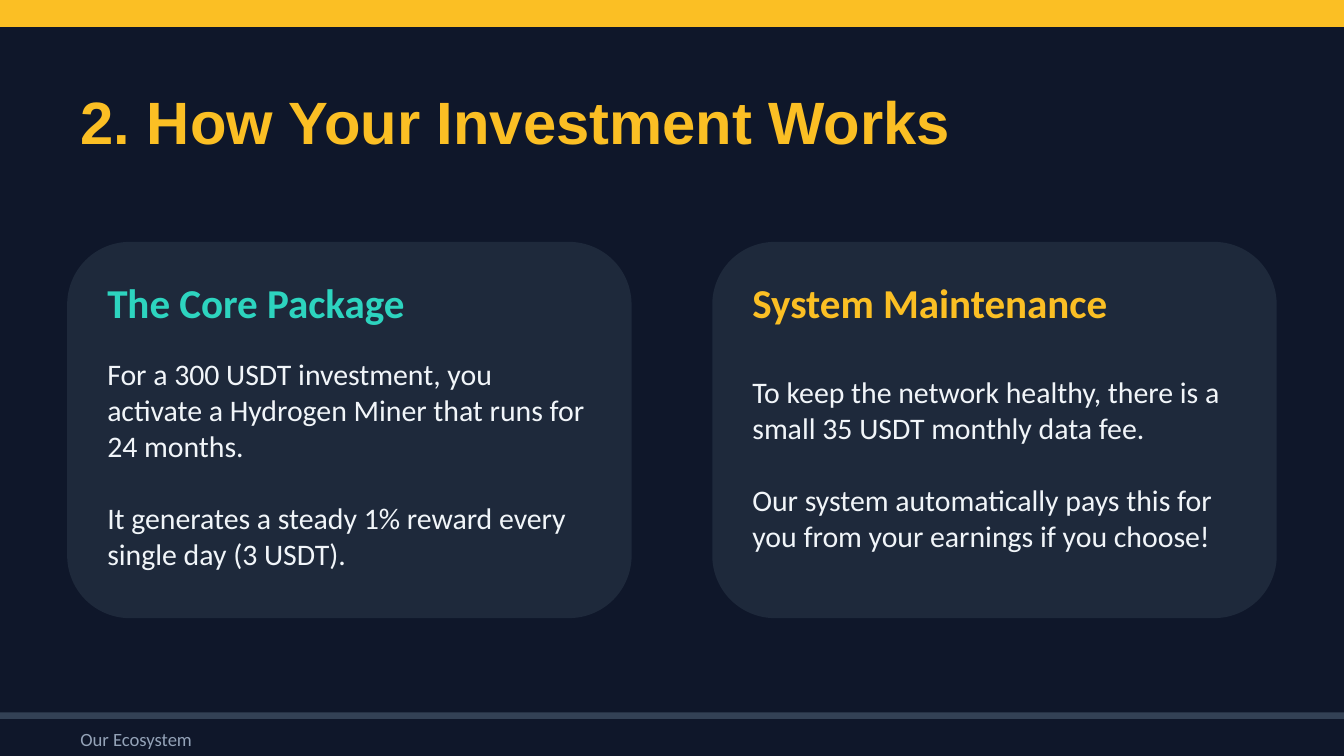
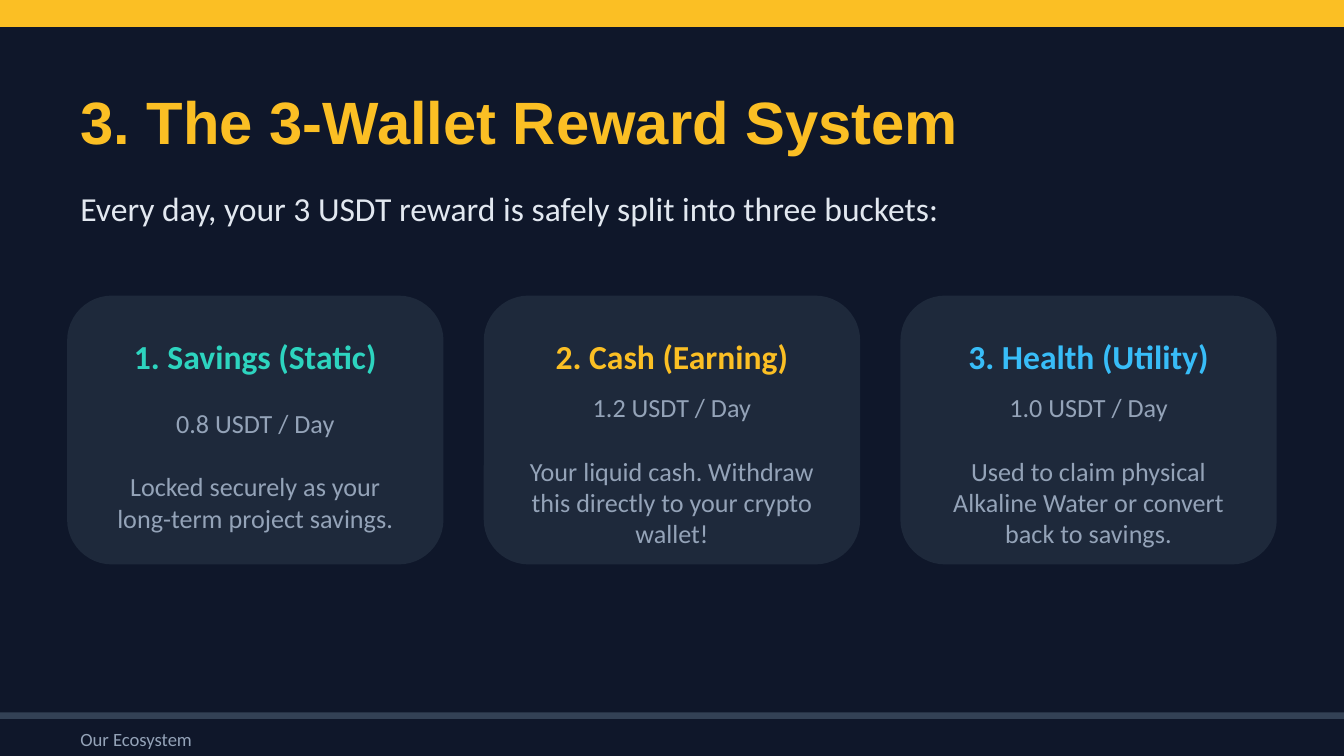
from pptx import Presentation
from pptx import util as u
from pptx.dml.color import RGBColor
from pptx.enum import shapes, text

HUES = {
    "night": "0F172A", "card": "1E293B", "rule": "334155", "gold": "FBBF24",
    "teal": "2DD4BF", "sky": "38BDF8", "pale": "F1F5F9", "soft": "E2E8F0",
    "mute": "94A3B8",
}
STYLES = {
    "title": dict(name="Arial", size=32, bold=True, hue="gold"),
    "lead": dict(name="Calibri", size=18, hue="soft"),
    "foot": dict(name="Calibri", size=10, hue="mute"),
    "wide head": dict(name="Calibri", size=22, bold=True),
    "wide body": dict(name="Calibri", size=16, hue="pale"),
    "slim head": dict(name="Calibri", size=18, bold=True),
    "slim body": dict(name="Calibri", size=14, hue="mute"),
}
LEFT, SPAN = 0.5, 9
LINE = 1.22  # line height of the body font, in ems


def tint(key):
    return RGBColor.from_string(HUES[key])


def place(box):
    return [u.Inches(n) for n in box]


def block(slide, kind, box, hue):
    item = slide.shapes.add_shape(kind, *place(box))
    item.shadow.inherit = False
    item.fill.solid()
    item.fill.fore_color.rgb = tint(hue)
    item.line.fill.background()
    return item


def write(frame, lines, style, hue=None, align=text.PP_ALIGN.LEFT):
    form = dict(STYLES[style])
    hue = hue or form.pop("hue")
    form["size"] = u.Pt(form["size"])
    traits = dict(word_wrap=True, auto_size=text.MSO_AUTO_SIZE.NONE,
                  vertical_anchor=text.MSO_ANCHOR.MIDDLE)
    for key, val in traits.items():
        setattr(frame, key, val)
    for i, line in enumerate(lines):
        para = frame.paragraphs[0] if i == 0 else frame.add_paragraph()
        para.alignment = align
        if i:
            para.space_before = int(form["size"] * LINE)
        run = para.add_run()
        run.text = line
        for key, val in form.items():
            setattr(run.font, key, val)
        run.font.color.rgb = tint(hue)


def label(slide, box, lines, style, **look):
    item = slide.shapes.add_textbox(*place(box))
    write(item.text_frame, lines, style, **look)
    return item


def dress(deck, slide):
    """Give the master its backdrop, bands and footer."""
    master = deck.slide_master
    master.background.fill.solid()
    master.background.fill.fore_color.rgb = tint("night")
    rect = shapes.MSO_SHAPE.RECTANGLE
    parts = [
        block(slide, rect, (0, 0, 10, 0.2), "gold"),
        block(slide, rect, (0, 5.3, 10, 0.05), "rule"),
        label(slide, (LEFT, 5.4, 2, 0.2), ["Our Ecosystem"], "foot"),
    ]
    for part in parts:
        master.shapes._spTree.append(part._element)


def head(slide, line):
    title = slide.shapes.title
    title.left, title.top, title.width, title.height = place((LEFT, 0.5, SPAN, 0.8))
    write(title.text_frame, [line], "title")


def card(slide, box, data, style, drop, tall, pad, align):
    """Draw a card; drop and tall place its body, pad insets its heading."""
    x, y, w, h = box
    name, hue, lines = data
    block(slide, shapes.MSO_SHAPE.ROUNDED_RECTANGLE, box, "card")
    label(slide, (x + pad, y + 0.2, w - 2 * pad, 0.5), [name],
          style + " head", hue=hue, align=align)
    label(slide, (x + 0.2, y + drop, w - 0.4, tall), lines,
          style + " body", align=align)


def row(slide, top, high, gap, cards, **look):
    """Spread equal cards over the content width."""
    wide = (SPAN - gap * (len(cards) - 1)) / len(cards)
    for i, data in enumerate(cards):
        card(slide, (LEFT + i * (wide + gap), top, wide, high), data, **look)


def works(slide):
    head(slide, "2. How Your Investment Works")
    row(slide, 1.8, 2.8, 0.6, [
        ("The Core Package", "teal", [
            "For a 300 USDT investment, you activate a Hydrogen Miner that runs for 24 months.",
            "It generates a steady 1% reward every single day (3 USDT)."]),
        ("System Maintenance", "gold", [
            "To keep the network healthy, there is a small 35 USDT monthly data fee.",
            "Our system automatically pays this for you from your earnings if you choose!"]),
    ], style="wide", drop=0.9, tall=1.5, pad=0.2, align=text.PP_ALIGN.LEFT)


def wallets(slide):
    head(slide, "3. The 3-Wallet Reward System")
    label(slide, (LEFT, 1.3, SPAN, 0.5),
          ["Every day, your 3 USDT reward is safely split into three buckets:"], "lead")
    row(slide, 2.2, 2, 0.3, [
        ("1. Savings (Static)", "teal", [
            "0.8 USDT / Day", "Locked securely as your long-term project savings."]),
        ("2. Cash (Earning)", "gold", [
            "1.2 USDT / Day",
            "Your liquid cash. Withdraw this directly to your crypto wallet!"]),
        ("3. Health (Utility)", "sky", [
            "1.0 USDT / Day",
            "Used to claim physical Alkaline Water or convert back to savings."]),
    ], style="slim", drop=0.8, tall=1, pad=0, align=text.PP_ALIGN.CENTER)


def main():
    deck = Presentation()
    deck.slide_width = u.Inches(10)
    deck.slide_height = deck.slide_width * 9 // 16
    plain = deck.slide_layouts.get_by_name("Title Only")
    pages = [deck.slides.add_slide(plain) for _ in range(2)]
    dress(deck, pages[0])
    works(pages[0])
    wallets(pages[1])
    deck.save("out.pptx")


if __name__ == "__main__":
    main()
